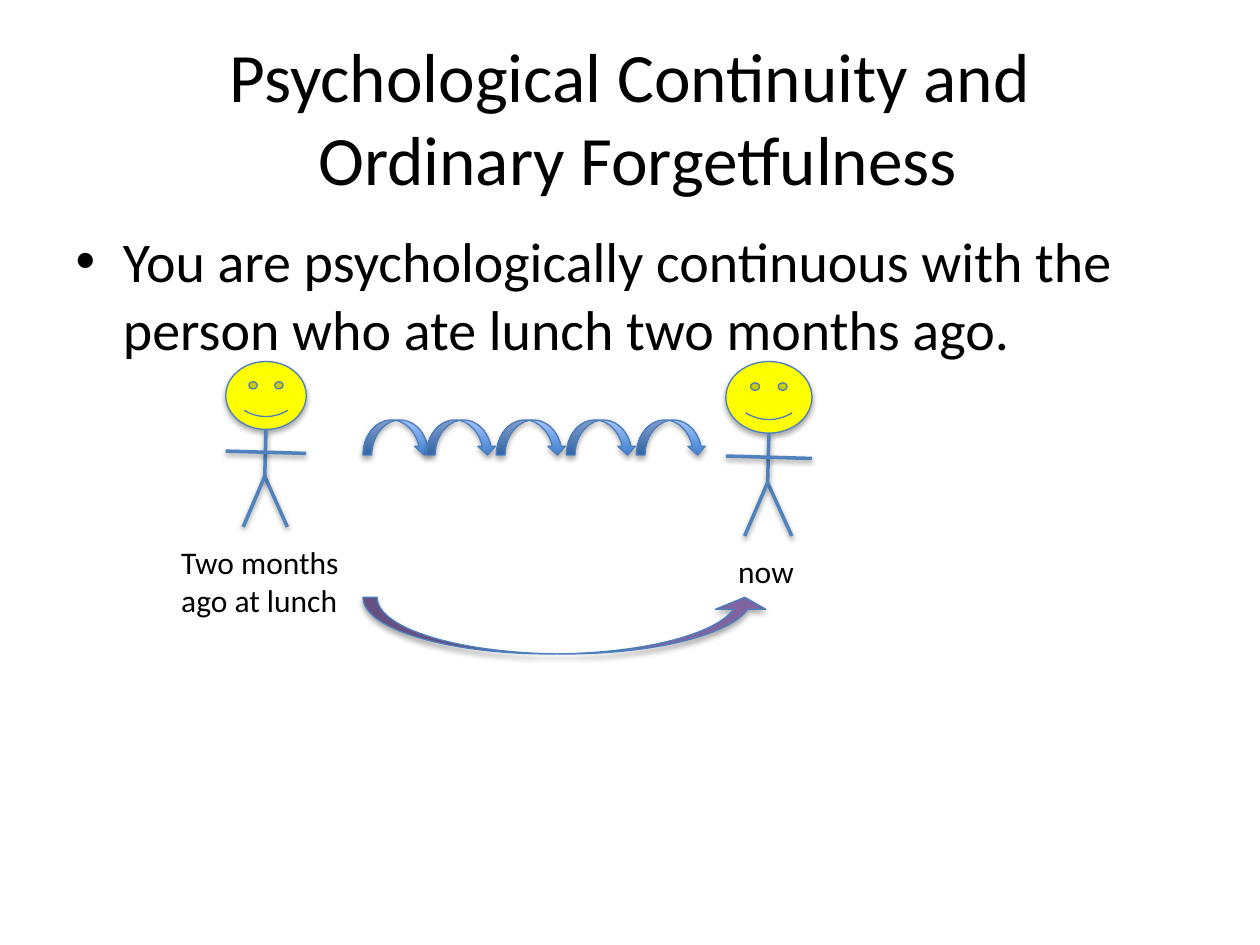
import dataclasses
import typing

import pptx
import pptx.dml.color
import pptx.enum.shapes
import pptx.enum.text
import pptx.util

Pt = pptx.util.Pt
MSO_SHAPE = pptx.enum.shapes.MSO_SHAPE
MSO_ANCHOR = pptx.enum.text.MSO_ANCHOR
MSO_AUTO_SIZE = pptx.enum.text.MSO_AUTO_SIZE
PP_ALIGN = pptx.enum.text.PP_ALIGN

COLORS = {
    "text": "000000",
    "face": "FFFF00",
    "limb": "4F81BD",
    "outline": "4B7EBC",
    "hop_dark": "3F80CE",
    "hop_light": "A4C4FF",
    "leap": "8064A2",
}
FONT = "Calibri"
HEAD = (46, 38.8)
LIMBS = (
    ((23, 38.8), (22.3, 65.6)),
    ((0, 51.2), (46, 52.5)),
    ((22.3, 65.6), (35.2, 94.5)),
    ((22.3, 65.6), (10, 94.5)),
)
HOP_TOP, HOP_SIZE = 240, (40, 20)
HOP_LEFTS = (207.4, *(243.6 + 40 * i for i in range(4)))


class Box(typing.NamedTuple):
    left: float
    top: float
    width: float
    height: float

    def emu(self) -> list[int]:
        return [Pt(v) for v in self]


@dataclasses.dataclass
class Person:
    left: float
    top: float
    scale_x: float
    scale_y: float
    label: str
    label_box: Box


PEOPLE = (
    Person(129, 206.6, 1, 1, "Two months ago at lunch", Box(96.5, 306.7, 111, 51)),
    Person(414.8, 206.6, 1.07, 1.055, "now", Box(414.8, 311.8, 57.6, 29)),
)


def rgb(name: str) -> pptx.dml.color.RGBColor:
    return pptx.dml.color.RGBColor.from_string(COLORS[name])


def format_text(tf, size: float) -> None:
    tf.word_wrap = True
    for p in tf.paragraphs:
        for r in p.runs:
            r.font.name = FONT
            r.font.size = Pt(size)
            r.font.color.rgb = rgb("text")


def fill_placeholder(sp, box: Box, text: str, size: float):
    sp.left, sp.top, sp.width, sp.height = box.emu()
    tf = sp.text_frame
    tf.text = text
    tf.auto_size = MSO_AUTO_SIZE.NONE
    format_text(tf, size)
    return tf


def add_outlined(shapes, kind: MSO_SHAPE, box: Box):
    sp = shapes.add_shape(kind, *box.emu())
    sp.line.color.rgb = rgb("outline")
    sp.line.width = Pt(0.75)
    return sp


def add_person(s, person: Person) -> None:
    shapes = s.shapes.add_group_shape().shapes

    def place(point: tuple[float, float]) -> tuple[int, int]:
        x, y = point
        return Pt(person.left + x * person.scale_x), Pt(person.top + y * person.scale_y)

    head = Box(person.left, person.top, HEAD[0] * person.scale_x, HEAD[1] * person.scale_y)
    sp = add_outlined(shapes, MSO_SHAPE.SMILEY_FACE, head)
    sp.fill.solid()
    sp.fill.fore_color.rgb = rgb("face")

    for start, end in LIMBS:
        limb = shapes.add_connector(
            pptx.enum.shapes.MSO_CONNECTOR.STRAIGHT, *place(start), *place(end)
        )
        limb.line.color.rgb = rgb("limb")
        limb.line.width = Pt(2)

    tf = shapes.add_textbox(*person.label_box.emu()).text_frame
    tf.text = person.label
    tf.auto_size = MSO_AUTO_SIZE.SHAPE_TO_FIT_TEXT
    format_text(tf, 18)


def add_hop(s, left: float) -> None:
    sp = add_outlined(s.shapes, MSO_SHAPE.CURVED_DOWN_ARROW, Box(left, HOP_TOP, *HOP_SIZE))
    sp.fill.gradient()
    sp.fill.gradient_angle = 90
    for stop, position, color in zip(sp.fill.gradient_stops, (0, 1), ("hop_dark", "hop_light")):
        stop.position = position
        stop.color.rgb = rgb(color)


def add_leap(s) -> None:
    sp = add_outlined(s.shapes, MSO_SHAPE.CURVED_UP_ARROW, Box(207.4, 341.3, 232.6, 32.4))
    for i, value in enumerate((0.25, 0.886, 0.212)):
        sp.adjustments[i] = value
    sp.fill.solid()
    sp.fill.fore_color.rgb = rgb("leap")


def main() -> None:
    prs = pptx.Presentation()
    prs.slide_width, prs.slide_height = Pt(720), Pt(540)
    s = prs.slides.add_slide(prs.slide_layouts[1])

    tf = fill_placeholder(
        s.shapes.title,
        Box(36, 21.6, 648, 90),
        "Psychological Continuity and\v Ordinary Forgetfulness",
        39.6,
    )
    tf.vertical_anchor = MSO_ANCHOR.MIDDLE
    tf.paragraphs[0].alignment = PP_ALIGN.CENTER
    fill_placeholder(
        s.placeholders[1],
        Box(36, 126, 648, 356.4),
        "You are psychologically continuous with the person who ate lunch two months ago.",
        32,
    )

    for person in PEOPLE:
        add_person(s, person)
    for left in HOP_LEFTS:
        add_hop(s, left)
    add_leap(s)

    prs.save("out.pptx")


if __name__ == "__main__":
    main()
